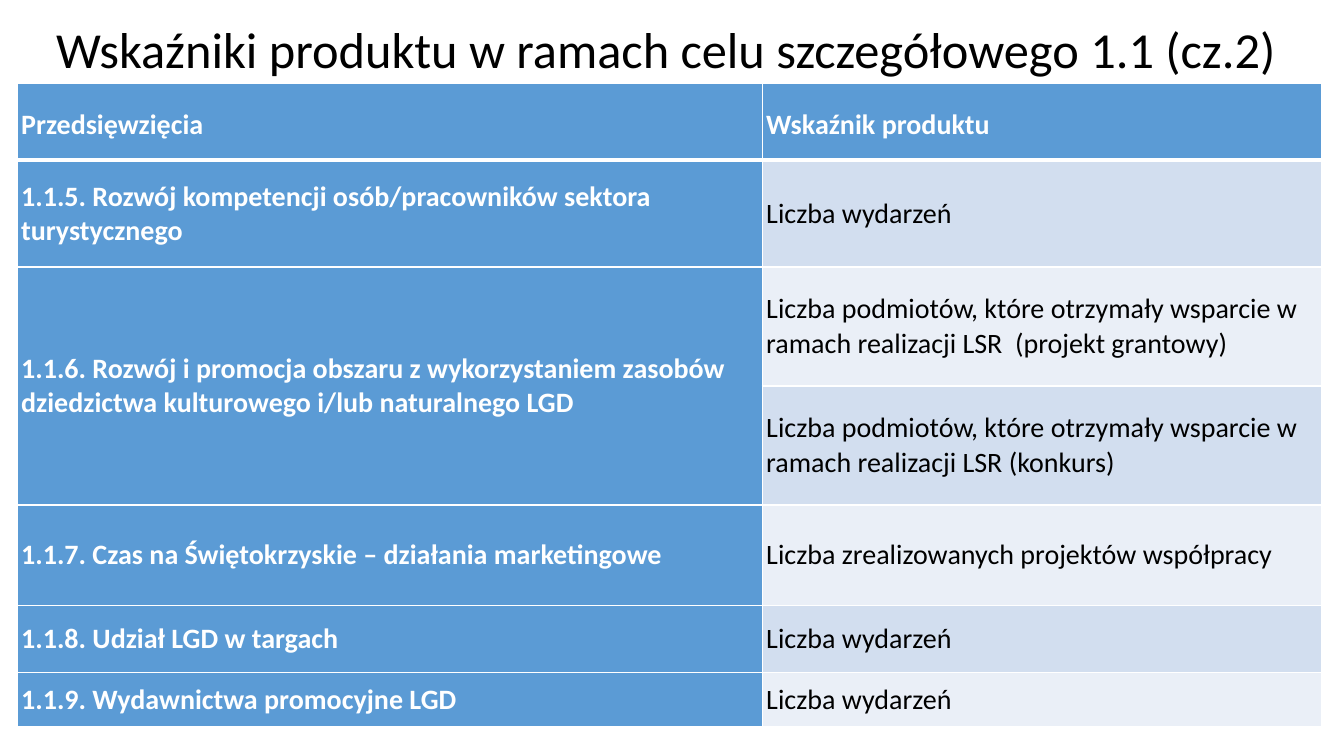
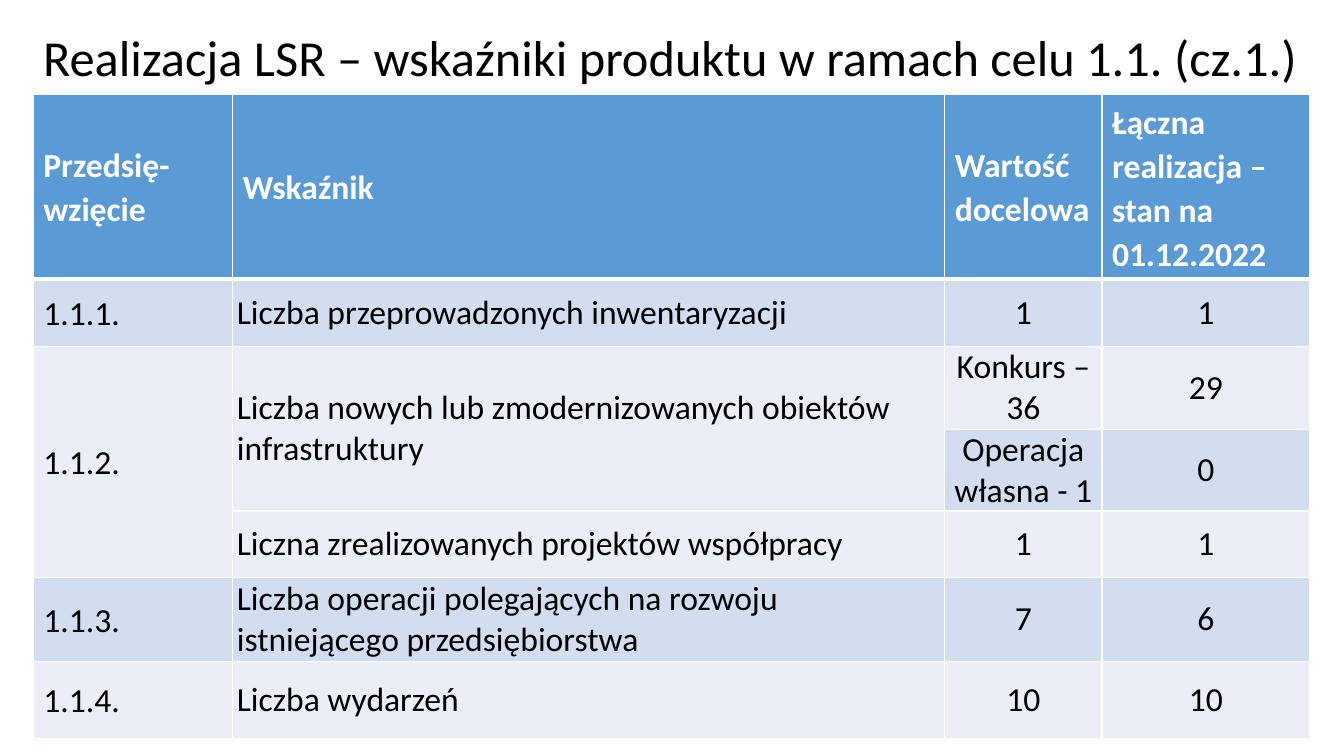
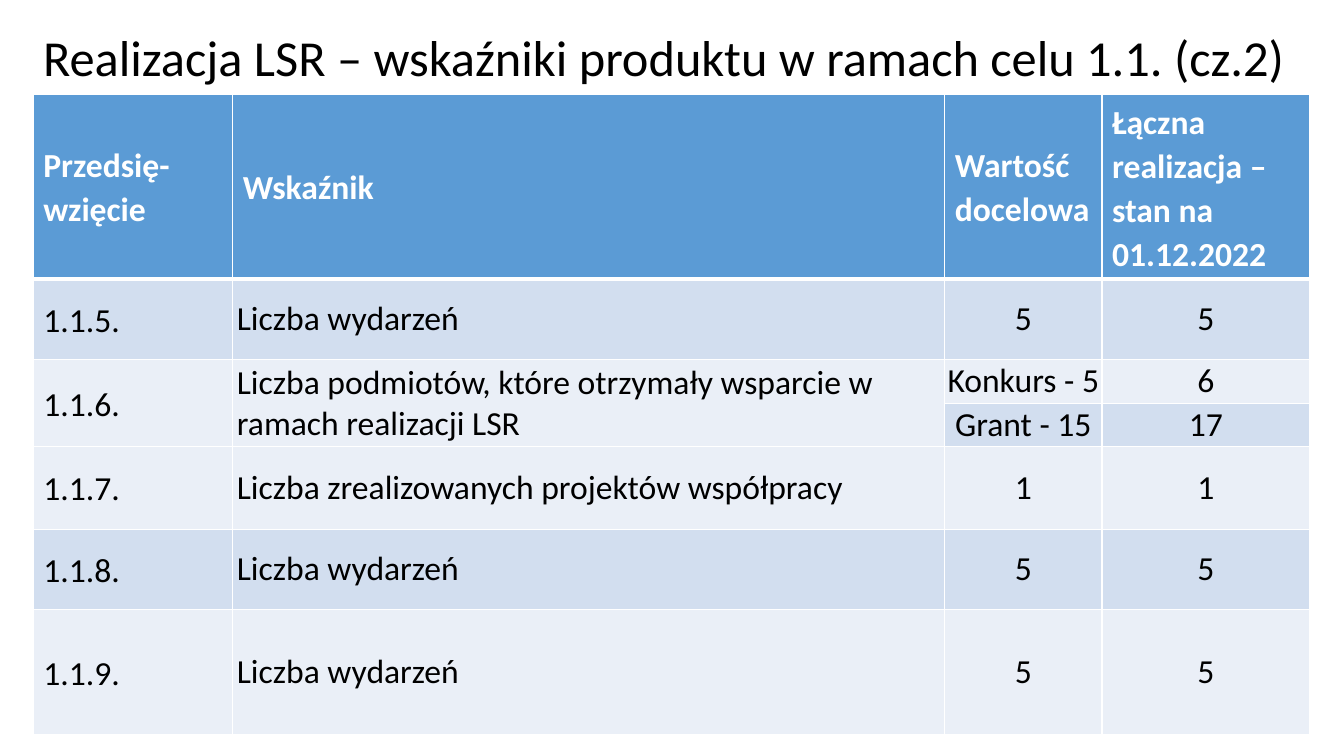
import collections
import pptx
import pptx.dml.color
import pptx.enum.text
import pptx.oxml.ns
import pptx.util
import lxml.etree

PX = 9144
FONT = "Calibri"
WHITE, BLACK, BLUE = "FFFFFF", "000000", "5B9BD5"
BANDS = ("EAEFF7", "D2DEEF")
ALIGN = pptx.enum.text.PP_ALIGN
MIDDLE = pptx.enum.text.MSO_ANCHOR.MIDDLE

CellStyle = collections.namedtuple("CellStyle", "align inset_x inset_y spacing")
ROOMY = CellStyle(ALIGN.LEFT, 10, 5, 1.07)
TIGHT = CellStyle(ALIGN.LEFT, 4, 0, 1.0)
TIGHT_HEAD = CellStyle(ALIGN.JUSTIFY, 4, 0, 1.15)
NUMBER = CellStyle(ALIGN.CENTER, 0, 0, 1.0)

PROJECT_ROWS = [
    ("Przedsięwzięcia", "Wskaźnik produktu"),
    ("1.1.5. Rozwój kompetencji osób/pracowników sektora turystycznego", "Liczba wydarzeń"),
    ("1.1.6. Rozwój i promocja obszaru z wykorzystaniem zasobów dziedzictwa kulturowego i/lub naturalnego LGD",
     "Liczba podmiotów, które otrzymały wsparcie w ramach realizacji LSR  (projekt grantowy)"),
    (None, "Liczba podmiotów, które otrzymały wsparcie w ramach realizacji LSR (konkurs)"),
    ("1.1.7. Czas na Świętokrzyskie – działania marketingowe", "Liczba zrealizowanych projektów współpracy"),
    ("1.1.8. Udział LGD w targach", "Liczba wydarzeń"),
    ("1.1.9. Wydawnictwa promocyjne LGD", "Liczba wydarzeń"),
]
RESULT_HEAD = ("Przedsię-wzięcie", "Wskaźnik", "Wartość docelowa", "Łączna realizacja – stan na 01.12.2022")
RESULT_ROWS_1 = [
    ("1.1.1.", "Liczba przeprowadzonych inwentaryzacji", "1", "1"),
    ("1.1.2.", "Liczba nowych lub zmodernizowanych obiektów infrastruktury", "Konkurs – 36", "29"),
    (None, None, "Operacja własna - 1", "0"),
    (None, "Liczna zrealizowanych projektów współpracy", "1", "1"),
    ("1.1.3.", "Liczba operacji polegających na rozwoju istniejącego przedsiębiorstwa", "7", "6"),
    ("1.1.4.", "Liczba wydarzeń", "10", "10"),
]
RESULT_ROWS_2 = [
    ("1.1.5.", "Liczba wydarzeń", "5", "5"),
    ("1.1.6.", "Liczba podmiotów, które otrzymały wsparcie w ramach realizacji LSR", "Konkurs - 5", "6"),
    (None, None, "Grant - 15", "17"),
    ("1.1.7.", "Liczba zrealizowanych projektów współpracy", "1", "1"),
    ("1.1.8.", "Liczba wydarzeń", "5", "5"),
    ("1.1.9.", "Liczba wydarzeń", "5", "5"),
]


def rgb(value):
    return pptx.dml.color.RGBColor.from_string(value)


def scaled(box):
    return [v * PX for v in box]


def write(p, text, size, color, spacing, align=ALIGN.LEFT, bold=False):
    p.alignment = align
    p.line_spacing = spacing
    r = p.add_run()
    r.text = text
    r.font.name = FONT
    r.font.size = pptx.util.Pt(size)
    r.font.bold = bold
    r.font.color.rgb = rgb(color)


def add_title(slide, box, text):
    tf = slide.shapes.add_textbox(*scaled(box)).text_frame
    tf.word_wrap = True
    tf.vertical_anchor = MIDDLE
    write(tf.paragraphs[0], text, 36, BLACK, 0.9)


def set_borders(cell, widths):
    qn = pptx.oxml.ns.qn
    tcPr = cell._tc.get_or_add_tcPr()
    for side, width in widths.items():
        ln = lxml.etree.SubElement(tcPr, qn("a:ln" + side), w=str(pptx.util.Pt(width)))
        fill = lxml.etree.SubElement(ln, qn("a:solidFill"))
        lxml.etree.SubElement(fill, qn("a:srgbClr"), val=WHITE)


def fill_cell(cell, text, style, row, strong, size):
    cell.margin_left = cell.margin_right = style.inset_x * PX
    cell.margin_top = cell.margin_bottom = style.inset_y * PX
    cell.vertical_anchor = MIDDLE
    set_borders(cell, {"L": 1, "R": 1, "T": 3 if row == 1 else 1, "B": 3 if row == 0 else 1})
    cell.fill.solid()
    cell.fill.fore_color.rgb = rgb(BLUE if strong else BANDS[row % 2])
    if text is not None:
        write(cell.text_frame.paragraphs[0], text, size, WHITE if strong else BLACK,
              style.spacing, style.align, strong)


def add_grid(slide, left, top, widths, heights, rows, head, styles, size, strong_first=False):
    box = (left, top, sum(widths), sum(heights))
    table = slide.shapes.add_table(len(rows), len(widths), *scaled(box)).table
    for column, width in zip(table.columns, widths):
        column.width = width * PX
    for line, height in zip(table.rows, heights):
        line.height = height * PX
    for j, style in enumerate(styles):
        for i, row in enumerate(rows):
            strong = i == 0 or (strong_first and j == 0)
            fill_cell(table.cell(i, j), row[j], head if i == 0 else style, i, strong, size)
            is_last = i + 1 == len(rows) or rows[i + 1][j] is not None
            if row[j] is not None:
                start = i
            if is_last and i > start:
                table.cell(start, j).merge(table.cell(i, j))


def add_projects_slide(slide):
    add_title(slide, (46, 0, 1233, 104), "Wskaźniki produktu w ramach celu szczegółowego 1.1 (cz.2)")
    add_grid(slide, 17, 83, (739, 555), (76, 106, 118, 118, 100, 66, 54),
             PROJECT_ROWS, TIGHT_HEAD, (TIGHT, TIGHT), 20, strong_first=True)


def add_results_slide(slide, part, heights, rows):
    add_title(slide, (33, 0, 1267, 119), f"Realizacja LSR – wskaźniki produktu w ramach celu 1.1. ({part})")
    add_grid(slide, 33, 94, (198, 706, 156, 206), heights,
             [RESULT_HEAD] + rows, ROOMY, (ROOMY, TIGHT, NUMBER, NUMBER), 24)


def main():
    prs = pptx.Presentation()
    prs.slide_width, prs.slide_height = 1333 * PX, 750 * PX
    slides = [prs.slides.add_slide(prs.slide_layouts[6]) for _ in range(3)]
    add_projects_slide(slides[0])
    add_results_slide(slides[1], "cz.1.", (183, 67, 82, 81, 66, 83, 77), RESULT_ROWS_1)
    add_results_slide(slides[2], "cz.2", (183, 80, 43, 43, 82, 80, 124), RESULT_ROWS_2)
    prs.save("out.pptx")


if __name__ == "__main__":
    main()
